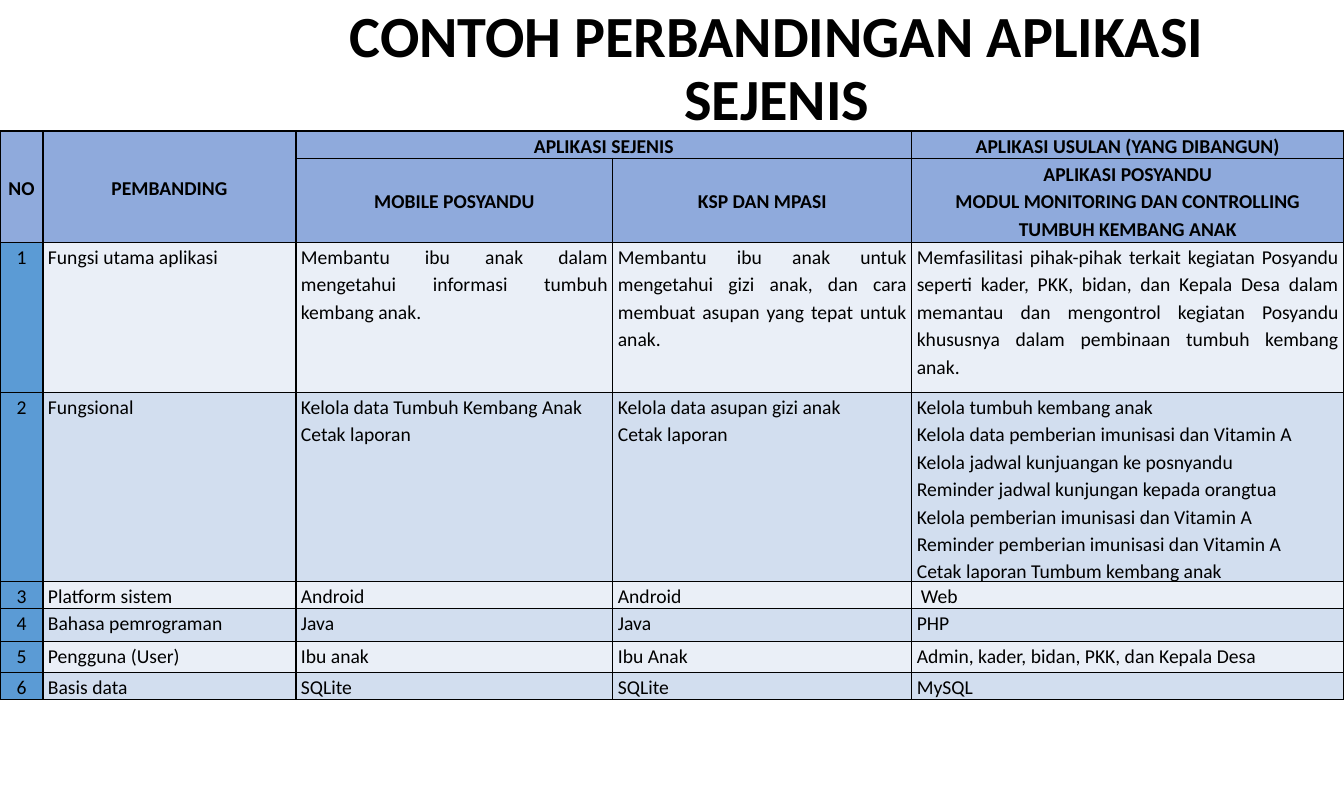
from lxml.etree import SubElement
from pptx import Presentation
from pptx.dml.color import RGBColor
from pptx.enum.text import MSO_ANCHOR, PP_ALIGN
from pptx.oxml.ns import qn
from pptx.util import Cm, Emu, Pt

PX = 9071  # EMU per px
FONT = "Calibri"
COLORS = {"text": "000000", "border": "000000", "header": "8FAADC",
          "number": "5B9BD5", "odd": "EAEFF7", "even": "D2DEEF"}


def style_paragraph(paragraph, size, bold, align, spacing):
    paragraph.alignment = align
    paragraph.line_spacing = spacing
    for run in paragraph.runs:
        run.font.name = FONT
        run.font.size = Pt(size)
        run.font.bold = bold
        run.font.color.rgb = RGBColor.from_string(COLORS["text"])


def add_borders(cell):
    properties = cell._tc.get_or_add_tcPr()
    for side in ("lnL", "lnR", "lnT", "lnB"):
        line = SubElement(properties, qn(f"a:{side}"), w=str(Pt(1)))
        fill = SubElement(line, qn("a:solidFill"))
        SubElement(fill, qn("a:srgbClr"), val=COLORS["border"])


prs = Presentation()
prs.slide_width, prs.slide_height = Emu(12192000), Cm(20)
slide = prs.slides.add_slide(prs.slide_layouts[6])

# Title
title = slide.shapes.add_textbox(249 * PX, 22 * PX, 1056 * PX, 97 * PX).text_frame
title.word_wrap = True
title.vertical_anchor = MSO_ANCHOR.MIDDLE
title.text = "CONTOH PERBANDINGAN APLIKASI SEJENIS"
style_paragraph(title.paragraphs[0], 41.6, True, PP_ALIGN.CENTER, 0.9)

# Comparison content: two header rows, then one row per criterion
headers = [
    ["NO", "PEMBANDING", "APLIKASI SEJENIS", "", "APLIKASI USULAN (YANG DIBANGUN)"],
    ["", "", "MOBILE POSYANDU", "KSP DAN MPASI",
     "APLIKASI POSYANDU\nMODUL MONITORING DAN CONTROLLING TUMBUH KEMBANG ANAK"],
]
criteria = [
    ["Fungsi utama aplikasi",
     "Membantu ibu anak dalam mengetahui informasi tumbuh kembang anak.",
     "Membantu ibu anak untuk mengetahui gizi anak, dan cara membuat asupan "
     "yang tepat untuk anak.",
     "Memfasilitasi pihak-pihak terkait kegiatan Posyandu seperti kader, PKK, bidan, "
     "dan Kepala Desa dalam memantau dan mengontrol kegiatan Posyandu khususnya "
     "dalam pembinaan tumbuh kembang anak."],
    ["Fungsional",
     "Kelola data Tumbuh Kembang Anak\nCetak laporan",
     "Kelola data asupan gizi anak\nCetak laporan",
     "Kelola tumbuh kembang anak\n"
     "Kelola data pemberian imunisasi dan Vitamin A\n"
     "Kelola jadwal kunjuangan ke posnyandu\n"
     "Reminder jadwal kunjungan kepada orangtua\n"
     "Kelola pemberian imunisasi dan Vitamin A\n"
     "Reminder pemberian imunisasi dan Vitamin A\n"
     "Cetak laporan Tumbum kembang anak"],
    ["Platform sistem", "Android", "Android", "Web"],
    ["Bahasa pemrograman", "Java", "Java", "PHP"],
    ["Pengguna (User)", "Ibu anak", "Ibu Anak", "Admin, kader, bidan, PKK, dan Kepala Desa"],
    ["Basis data", "SQLite", "SQLite", "MySQL"],
]
rows = headers + [[str(number), *row] for number, row in enumerate(criteria, 1)]
column_widths = [43, 253, 317, 299, 432]
row_heights = [27, 84, 150, 157, 27, 33, 31, 27]

# Table grid
comparison = slide.shapes.add_table(
    len(rows), len(column_widths), 0, 131 * PX,
    sum(column_widths) * PX, sum(row_heights) * PX).table
comparison.first_row = comparison.horz_banding = False
for column, width in zip(comparison.columns, column_widths):
    column.width = width * PX
for row, height in zip(comparison.rows, row_heights):
    row.height = height * PX

# Cells
for r, row in enumerate(rows):
    is_header = r < len(headers)
    for c, text in enumerate(row):
        cell = comparison.cell(r, c)
        cell.margin_left = cell.margin_right = 5 * PX
        cell.margin_top = cell.margin_bottom = 0
        cell.vertical_anchor = MSO_ANCHOR.MIDDLE if is_header else MSO_ANCHOR.TOP
        if is_header:
            color, align = "header", PP_ALIGN.CENTER
        elif c == 0:
            color, align = "number", PP_ALIGN.CENTER
        else:
            color = "even" if r % 2 else "odd"
            justified = c == 4 or (c > 1 and r < 5)
            align = PP_ALIGN.JUSTIFY if justified else PP_ALIGN.LEFT
        add_borders(cell)
        cell.fill.solid()
        cell.fill.fore_color.rgb = RGBColor.from_string(COLORS[color])
        cell.text_frame.text = text
        for paragraph in cell.text_frame.paragraphs:
            style_paragraph(paragraph, 14, is_header, align, 1.15)

# The proposed platform is set in slightly
proposed_platform = comparison.cell(4, 4)
proposed_platform.margin_left = 9 * PX
proposed_platform.text_frame.paragraphs[0].alignment = PP_ALIGN.LEFT

# Merged headers
for first, last in [((0, 0), (1, 0)), ((0, 1), (1, 1)), ((0, 2), (0, 3))]:
    comparison.cell(*first).merge(comparison.cell(*last))

prs.save("out.pptx")
